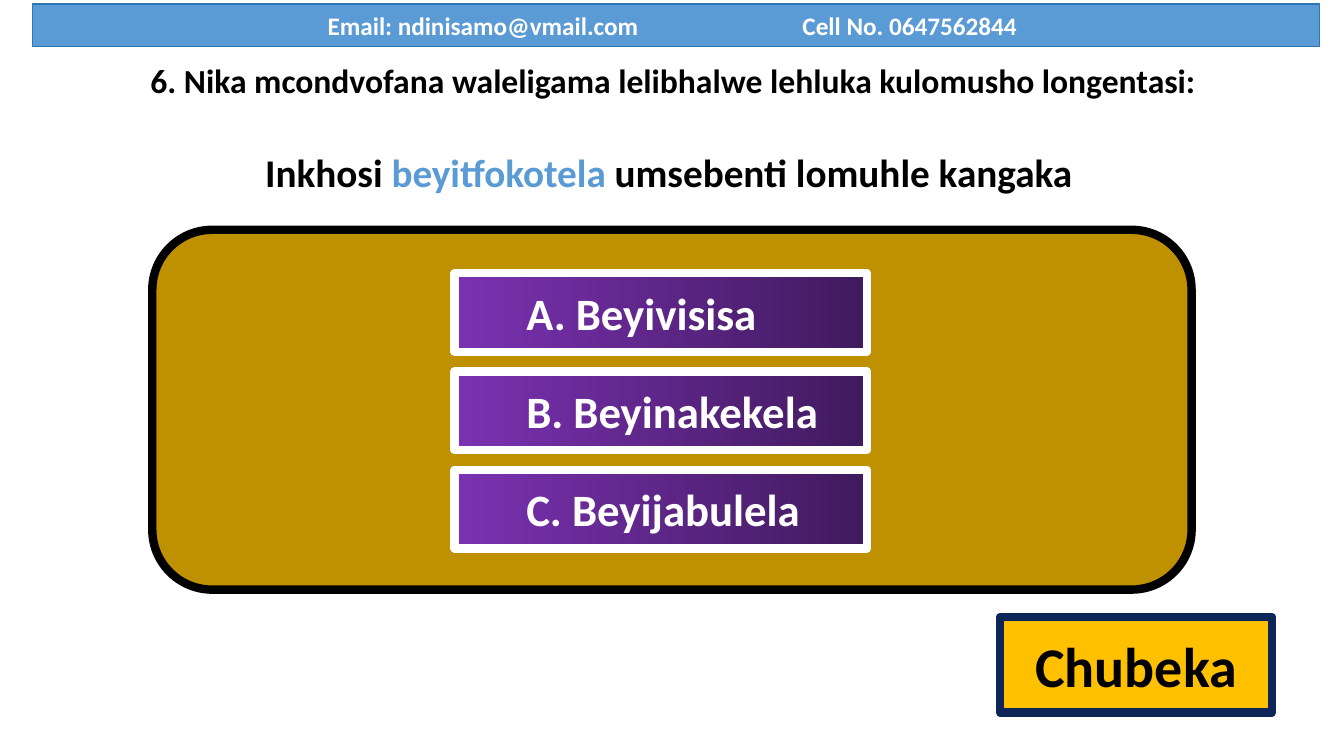
from dataclasses import dataclass

from lxml.etree import SubElement as Sub
from pptx import Presentation
from pptx.dml.color import RGBColor as Rgb
from pptx.dml.fill import FillFormat as Fill
from pptx.enum.shapes import MSO_SHAPE as Kind
from pptx.enum.text import MSO_ANCHOR as Anchor, PP_ALIGN as Align
from pptx.oxml.ns import qn
from pptx.util import Inches, Pt

WIDE, HIGH = Inches(13.33), Inches(7.5)
FACE = "Calibri"
HUES = {
    "black": "000000",
    "white": "FFFFFF",
    "gold": "BF9000",
    "amber": "FFC000",
    "navy": "0E2557",
    "sky": "5B9BD5",
    "steel": "2E75B6",
    "green": "70AD47",
    "violet": "7B32B2",
    "plum": "401A5D",
}


@dataclass
class Area:
    left: float
    top: float
    width: float
    height: float

    def spans(self) -> tuple[int, int, int, int]:
        return across(self.left), down(self.top), across(self.width), down(self.height)


@dataclass
class Block:
    kind: Kind
    area: Area
    fill: tuple[str, ...]
    edge: str
    weight: float = 6
    text: str = ""
    size: int = 0
    ink: str = "white"
    align: Align = Align.CENTER
    inset: float = 0
    tab: float = 0
    round: bool = False


def across(share: float) -> int:
    return round(WIDE * share / 100)


def down(share: float) -> int:
    return round(HIGH * share / 100)


def hue(name: str) -> Rgb:
    return Rgb.from_string(HUES[name])


def paint(fill: Fill, names: tuple[str, ...], angle: float = 0) -> None:
    if len(names) == 1:
        fill.solid()
        fill.fore_color.rgb = hue(names[0])
        return
    fill.gradient()
    fill.gradient_angle = angle
    for stop, name, place in zip(fill.gradient_stops, names, (0, 1)):
        stop.color.rgb = hue(name)
        stop.position = place


def style(para, size: int, ink: str, align: Align) -> None:
    para.alignment = align
    font = para.font
    font.name, font.size, font.bold = FACE, Pt(size), True
    font.color.rgb = hue(ink)


def draw(slide, block: Block) -> None:
    shape = slide.shapes.add_shape(block.kind, *block.area.spans())
    shape.shadow.inherit = False
    paint(shape.fill, block.fill)
    shape.line.color.rgb = hue(block.edge)
    shape.line.width = Pt(block.weight)
    if block.round:
        Sub(shape.line._get_or_add_ln(), qn("a:round"))
    if not block.text:
        return
    frame = shape.text_frame
    frame.word_wrap = True
    frame.vertical_anchor = Anchor.MIDDLE
    if block.inset:
        frame.margin_left = across(block.inset)
    para = frame.paragraphs[0]
    para.text = block.text
    if block.tab:
        tabs = Sub(para._p.get_or_add_pPr(), qn("a:tabLst"))
        Sub(tabs, qn("a:tab"), pos=str(across(block.tab)), algn="l")
    style(para, block.size, block.ink, block.align)


def ask(slide, area: Area) -> None:
    frame = slide.shapes.add_textbox(*area.spans()).text_frame
    frame.word_wrap = True
    task = frame.paragraphs[0]
    task.text = "6. Nika mcondvofana waleligama lelibhalwe lehluka kulomusho longentasi:"
    style(task, 24, "black", Align.CENTER)
    line = frame.add_paragraph()
    line.space_before = Pt(34)
    style(line, 28, "black", Align.CENTER)
    for text in ("Inkhosi ", "beyitfokotela", " umsebenti lomuhle kangaka "):
        run = line.add_run()
        run.text = text
        if text == "beyitfokotela":
            paint(run.font.fill, ("sky", "green"), 315)


def main() -> None:
    deck = Presentation()
    deck.slide_width, deck.slide_height = WIDE, HIGH
    slide = deck.slides.add_slide(deck.slide_layouts[6])

    draw(slide, Block(Kind.ROUNDED_RECTANGLE, Area(11.33, 30.4, 77.33, 47.6),
                      ("gold",), "black"))
    ask(slide, Area(3.98, 7.33, 92.2, 16.27))
    words = ("A. Beyivisisa", "B. Beyinakekela", "C. Beyijabulela")
    for row, word in enumerate(words):
        draw(slide, Block(Kind.ACTION_BUTTON_CUSTOM,
                          Area(33.83, 36.13 + 13 * row, 30.68, 10.4),
                          ("violet", "plum"), "white", text=word, size=32,
                          align=Align.LEFT, inset=5.33, round=True))
    draw(slide, Block(Kind.ACTION_BUTTON_CUSTOM, Area(74.4, 81.6, 20.25, 12.67),
                      ("amber",), "navy", text="Chubeka", size=40, ink="black"))
    draw(slide, Block(Kind.RECTANGLE, Area(2.4, 0.53, 95.8, 5.6),
                      ("sky",), "steel", 1,
                      "Email: ndinisamo@vmail.com\tCell No. 0647562844", 18,
                      align=Align.LEFT, inset=21.98, tab=35.33))
    deck.save("out.pptx")


if __name__ == "__main__":
    main()
